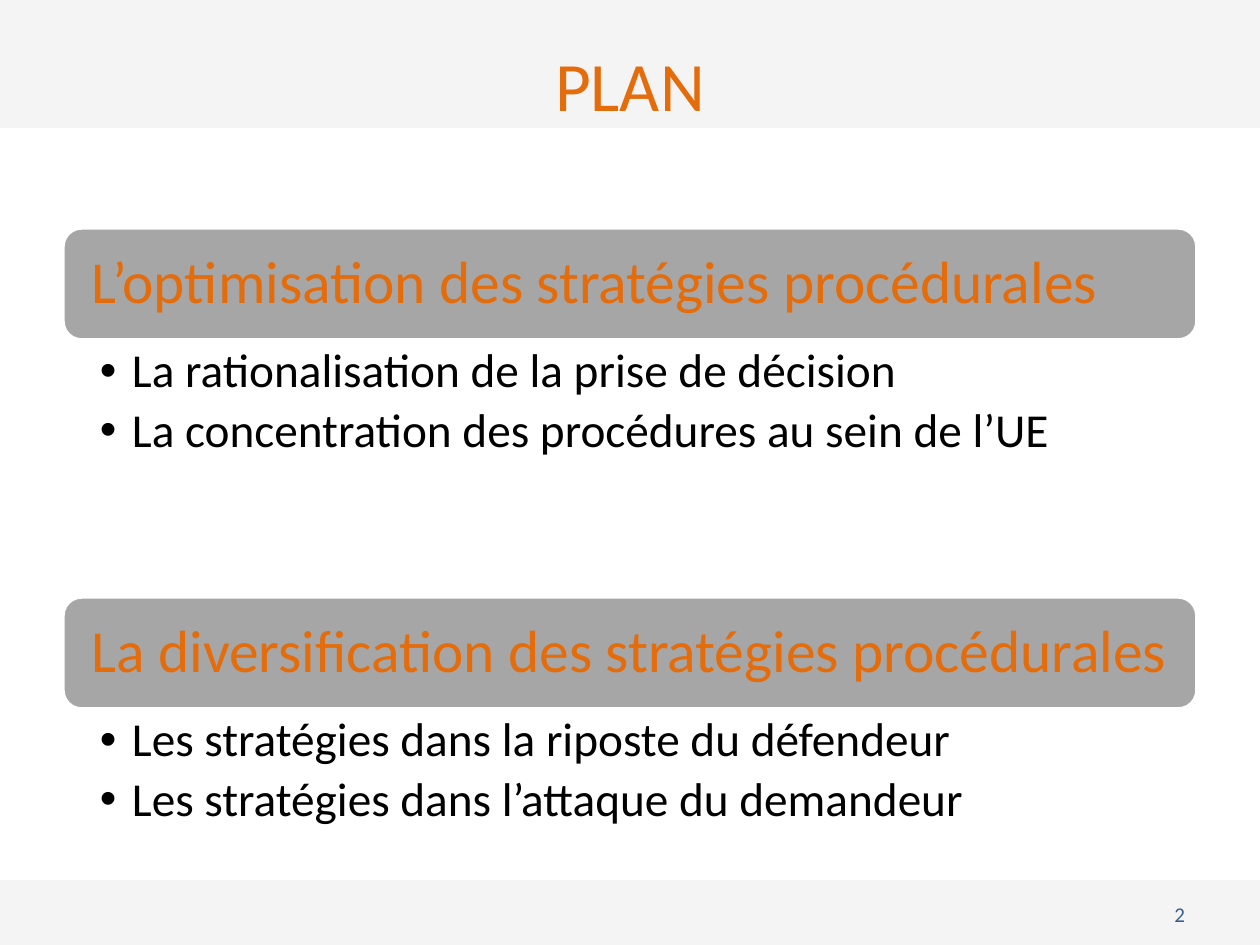
from dataclasses import dataclass

from lxml import etree
from pptx import Presentation
from pptx.dml.color import RGBColor
from pptx.enum import shapes, text
from pptx.oxml import ns
from pptx.util import Emu, Pt

SCALE = 914400 / 126


@dataclass(frozen=True)
class Theme:
    font: str = "Calibri"
    accent: str = "E46C0A"
    band: str = "EAEAEA"
    bar: str = "A6A6A6"
    edge: str = "FFFFFF"
    body: str = "000000"
    number: str = "376092"
    title_size: float = 39.6
    head_size: float = 34
    item_size: float = 27
    number_size: float = 12


THEME = Theme()
SECTIONS = [
    ("L’optimisation des stratégies procédurales",
     ["La rationalisation de la prise de décision",
      "La concentration des procédures au sein de l’UE"]),
    ("La diversification des stratégies procédurales",
     ["Les stratégies dans la riposte du défendeur",
      "Les stratégies dans l’attaque du demandeur"]),
]


def px(n):
    return Emu(round(n * SCALE))


def set_frame(shape, insets, anchor):
    """Set wrapping, insets (left, top, right, bottom) and anchor."""
    frame = shape.text_frame
    frame.word_wrap = True
    frame.vertical_anchor = anchor
    (frame.margin_left, frame.margin_top,
     frame.margin_right, frame.margin_bottom) = map(px, insets)
    return frame


def add_run(para, words, size, color, align=text.PP_ALIGN.LEFT):
    para.alignment = align
    run = para.add_run()
    run.text = words
    run.font.name = THEME.font
    run.font.size = Pt(size)
    run.font.color.rgb = RGBColor.from_string(color)


def add_bullet(para, indent):
    props = para._p.get_or_add_pPr()
    props.set("marL", str(px(indent)))
    props.set("indent", str(-px(indent)))
    etree.SubElement(props, ns.qn("a:buFont")).set("typeface", "Arial")
    etree.SubElement(props, ns.qn("a:buChar")).set("char", "•")


def add_panel(slide, kind, box, color):
    panel = slide.shapes.add_shape(kind, *map(px, box))
    panel.shadow.inherit = False
    panel.fill.solid()
    panel.fill.fore_color.rgb = RGBColor.from_string(color)
    return panel


def add_band(slide, box):
    """Draw a half-transparent strip across the slide."""
    band = add_panel(slide, shapes.MSO_SHAPE.RECTANGLE, box, THEME.band)
    band.line.fill.background()
    color = band._element.spPr.find(ns.qn("a:solidFill"))[0]
    etree.SubElement(color, ns.qn("a:alpha")).set("val", "50000")


def add_title(slide, box, words):
    label = slide.shapes.add_textbox(*map(px, box))
    frame = set_frame(label, (12, 4, 12, 6), text.MSO_ANCHOR.TOP)
    add_run(frame.paragraphs[0], words, THEME.title_size, THEME.accent,
            text.PP_ALIGN.CENTER)


def add_section(slide, box, head, items):
    """Place a heading bar with its bullet list below."""
    left, top, width, height = box
    bar_high = 112
    bar = add_panel(slide, shapes.MSO_SHAPE.ROUNDED_RECTANGLE,
                    (left, top, width, bar_high), THEME.bar)
    bar.line.color.rgb = RGBColor.from_string(THEME.edge)
    bar.line.width = Pt(2)
    frame = set_frame(bar, (23, 18, 23, 18), text.MSO_ANCHOR.MIDDLE)
    para = frame.paragraphs[0]
    para.line_spacing = 0.9
    add_run(para, head, THEME.head_size, THEME.accent)

    body = (left, top + bar_high + 1, width, height - bar_high - 1)
    label = slide.shapes.add_textbox(*map(px, body))
    frame = set_frame(label, (37, 6, 33, 6), text.MSO_ANCHOR.TOP)
    for i, item in enumerate(items):
        para = frame.add_paragraph() if i else frame.paragraphs[0]
        para.line_spacing = 0.9
        para.space_after = Pt(5)
        add_bullet(para, 32)
        add_run(para, item, THEME.item_size, THEME.body)


def add_number(slide, box, words):
    label = slide.shapes.add_textbox(*map(px, box))
    frame = set_frame(label, (12, 6, 12, 6), text.MSO_ANCHOR.MIDDLE)
    add_run(frame.paragraphs[0], words, THEME.number_size, THEME.number,
            text.PP_ALIGN.RIGHT)


def main():
    deck = Presentation()
    deck.slide_width, deck.slide_height = px(1260), px(945)
    slide = deck.slides.add_slide(deck.slide_layouts[6])
    add_band(slide, (0, 880, 1265, 69))
    add_band(slide, (0, -4, 1260, 132))
    add_title(slide, (63, 38, 1134, 176), "PLAN")
    top, pitch = 228, 369
    for i, (head, items) in enumerate(SECTIONS):
        box = (63, top + i * pitch, 1134, 242)
        add_section(slide, box, head, items)
    add_number(slide, (903, 889, 294, 50), "2")
    deck.save("out.pptx")


if __name__ == "__main__":
    main()
